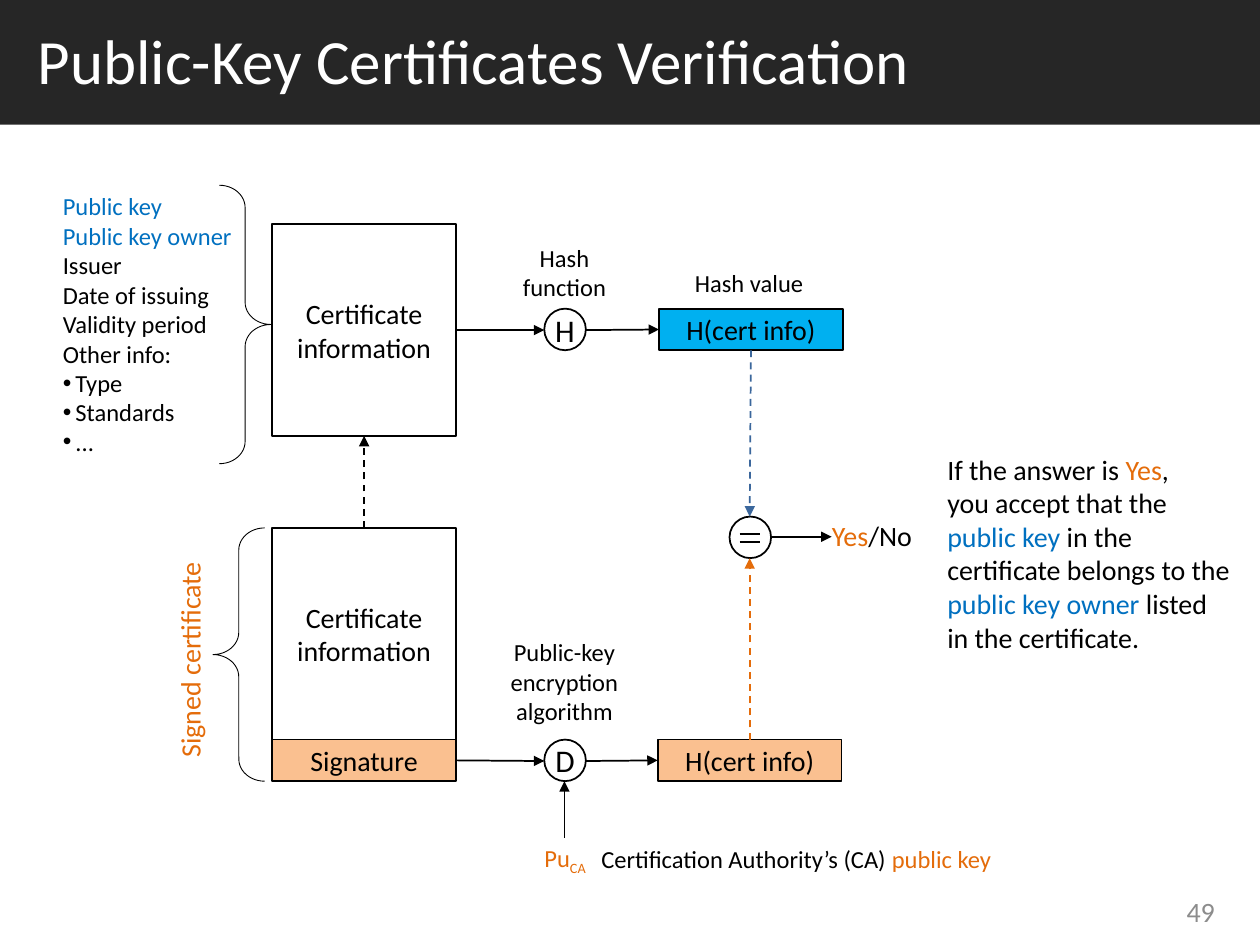
import pptx
import pptx.util
import pptx.dml.color
import pptx.enum.dml
import pptx.enum.shapes
import pptx.enum.text
import pptx.oxml
import pptx.oxml.ns
import lxml.etree

Inches = pptx.util.Inches
Pt = pptx.util.Pt
KIND = pptx.enum.shapes.MSO_SHAPE
WIRE = pptx.enum.shapes.MSO_CONNECTOR.STRAIGHT
ALIGN = pptx.enum.text.PP_ALIGN
MID = pptx.enum.text.MSO_ANCHOR.MIDDLE
TOP = pptx.enum.text.MSO_ANCHOR.TOP
BLACK, WHITE, ORANGE, BLUE, PEACH = "000000", "FFFFFF", "E46C0A", "0070C0", "FAC090"


def tint(code):
    return pptx.dml.color.RGBColor.from_string(code)


def write(shape, lines, size=16, color=BLACK, align=ALIGN.CENTER, anchor=TOP,
          pad=(0.1, 0.05, 0.1, 0.05), wrap=True, dots=()):
    frame = shape.text_frame
    frame.word_wrap = wrap
    frame.vertical_anchor = anchor
    frame.margin_left, frame.margin_top, frame.margin_right, frame.margin_bottom = map(Inches, pad)
    for i, line in enumerate(lines):
        para = frame.paragraphs[0] if i == 0 else frame.add_paragraph()
        if i in dots:
            prop = para._p.get_or_add_pPr()
            prop.set("marL", str(Inches(0.1)))
            prop.set("indent", str(-Inches(0.1)))
            font = lxml.etree.SubElement(prop, pptx.oxml.ns.qn("a:buFont"))
            font.set("typeface", "Arial")
            mark = lxml.etree.SubElement(prop, pptx.oxml.ns.qn("a:buChar"))
            mark.set("char", "•")
        para.alignment = align
        for part in [line] if isinstance(line, str) else line:
            text, shade = (part, color) if isinstance(part, str) else part
            run = para.add_run()
            run.text = text
            run.font.size = Pt(size)
            run.font.name = "Calibri"
            run.font.color.rgb = tint(shade)


deck = pptx.Presentation()
deck.slide_width, deck.slide_height = Inches(10), Inches(7.5)
slide = deck.slides.add_slide(deck.slide_layouts[6])
shapes = slide.shapes

nodes = {}
for name, kind, x, y, w, h, fill, line in [
    ("title", KIND.RECTANGLE, 0, 0, 10, 0.99, "262626", 0),
    ("info", KIND.RECTANGLE, 2.16, 1.78, 1.46, 1.68, None, 1),
    ("signed", KIND.RECTANGLE, 2.16, 4.19, 1.46, 1.68, None, 1),
    ("sign", KIND.RECTANGLE, 2.16, 5.87, 1.46, 0.33, PEACH, 1),
    ("hash", KIND.RECTANGLE, 5.23, 2.45, 1.46, 0.33, "00B0F0", 1),
    ("plain", KIND.RECTANGLE, 5.22, 5.87, 1.46, 0.33, PEACH, 1),
    ("H", KIND.OVAL, 4.32, 2.45, 0.33, 0.33, None, 1),
    ("D", KIND.OVAL, 4.32, 5.87, 0.33, 0.33, None, 1),
    ("equal", KIND.OVAL, 5.79, 4.1, 0.33, 0.33, None, 1),
    ("fields", KIND.LEFT_BRACE, 1.74, 1.47, 0.41, 2.21, None, 0.5),
    ("whole", KIND.LEFT_BRACE, 1.69, 4.19, 0.41, 2.01, None, 0.5),
]:
    node = shapes.add_shape(kind, Inches(x), Inches(y), Inches(w), Inches(h))
    node.shadow.inherit = False
    if fill:
        node.fill.solid()
        node.fill.fore_color.rgb = tint(fill)
    else:
        node.fill.background()
    if line:
        node.line.color.rgb = tint(BLACK)
        node.line.width = Pt(line)
    else:
        node.line.fill.background()
    if kind == KIND.LEFT_BRACE:
        node.adjustments[0] = 0.43
    nodes[name] = node
nodes["fields"].rotation = 180

write(nodes["title"], ["Public-Key Certificates Verification"], size=36, color=WHITE,
      align=ALIGN.LEFT, anchor=MID, pad=(0.3, 0.05, 0.1, 0.1))
for name in "info", "signed":
    write(nodes[name], ["Certificate information"], anchor=MID)
for name, text in ("sign", "Signature"), ("hash", "H(cert info)"), ("plain", "H(cert info)"):
    write(nodes[name], [text], anchor=MID, pad=(0, 0.05, 0, 0.05))
for name in "H", "D":
    write(nodes[name], [name], size=18, anchor=MID, pad=(0, 0, 0, 0), wrap=False)

left = {"align": ALIGN.LEFT}
small = {"size": 14}
labels = {}
for name, x, y, w, h, lines, form in [
    ("page", 9.02, 7.03, 0.72, 0.4, ["49"],
     {"color": "8C8C8C", "align": ALIGN.RIGHT, "anchor": MID}),
    ("value", 5.37, 2.08, 1.15, 0.34, ["Hash value"], small),
    ("func", 4.04, 1.88, 0.88, 0.57, ["Hash", "function"], small),
    ("algo", 3.91, 5.01, 1.14, 0.81, ["Public-key encryption algorithm"], small),
    ("owner", 4.65, 6.65, 3.34, 0.34,
     [["Certification Authority’s (CA) ", ("public key", ORANGE)]], small),
    ("key", 4.21, 6.64, 0.55, 0.34, [["Pu", "CA"]],
     {"size": 14, "color": ORANGE, "wrap": False}),
    ("side", 0.61, 5.03, 1.79, 0.37, ["Signed certificate"], {"color": ORANGE, **left}),
    ("list", 0.4, 1.47, 1.62, 2.22,
     [[("Public key", BLUE)], [("Public key owner", BLUE)], "Issuer", "Date of issuing",
      "Validity period", "Other info:", "Type", "Standards", "..."],
     {"dots": (6, 7, 8), **small, **left}),
    ("answer", 7.42, 3.54, 2.46, 1.72,
     [["If the answer is ", ("Yes", ORANGE), ","],
      ["you accept that the ", ("public key ", BLUE), "in the certificate belongs to the ",
       ("public key owner", BLUE), " listed"],
      "in the certificate."], left),
    ("result", 6.5, 4.07, 0.84, 0.37, [[("Yes", ORANGE), "/No"]], {}),
]:
    labels[name] = shapes.add_textbox(Inches(x), Inches(y), Inches(w), Inches(h))
    write(labels[name], lines, **form)
labels["side"].rotation = 270
sub = labels["key"].text_frame.paragraphs[0].runs[1]
sub.font._element.set("baseline", "-25000")

for x1, y1, x2, y2, color, dash, arrow, start, end in [
    (3.62, 2.62, 4.32, 2.62, BLACK, False, True, ("info", 3), None),
    (4.65, 2.62, 5.23, 2.62, BLACK, False, True, None, ("hash", 1)),
    (3.62, 6.03, 4.32, 6.04, BLACK, False, True, ("sign", 3), None),
    (4.65, 6.04, 5.22, 6.03, BLACK, False, True, None, ("plain", 1)),
    (4.48, 6.65, 4.48, 6.2, BLACK, False, True, None, None),
    (2.89, 4.19, 2.89, 3.46, BLACK, True, True, ("signed", 0), ("info", 2)),
    (5.87, 4.24, 6.03, 4.24, BLACK, False, False, None, None),
    (5.87, 4.3, 6.03, 4.3, BLACK, False, False, None, None),
    (6.12, 4.26, 6.6, 4.26, BLACK, False, True, None, None),
    (5.96, 2.78, 5.95, 4.1, "3B679C", True, True, ("hash", 2), None),
    (5.95, 5.87, 5.95, 4.43, ORANGE, True, True, ("plain", 0), None),
]:
    wire = shapes.add_connector(WIRE, Inches(x1), Inches(y1), Inches(x2), Inches(y2))
    if start:
        wire.begin_connect(nodes[start[0]], start[1])
    if end:
        wire.end_connect(nodes[end[0]], end[1])
    wire.line.color.rgb = tint(color)
    wire.line.width = Pt(1)
    if dash:
        wire.line.dash_style = pptx.enum.dml.MSO_LINE.DASH
    if arrow:
        tip = lxml.etree.SubElement(wire.line._get_or_add_ln(), pptx.oxml.ns.qn("a:tailEnd"))
        tip.set("type", "triangle")
    lxml.etree.SubElement(wire._element.spPr, pptx.oxml.ns.qn("a:effectLst"))

deck.save("out.pptx")
